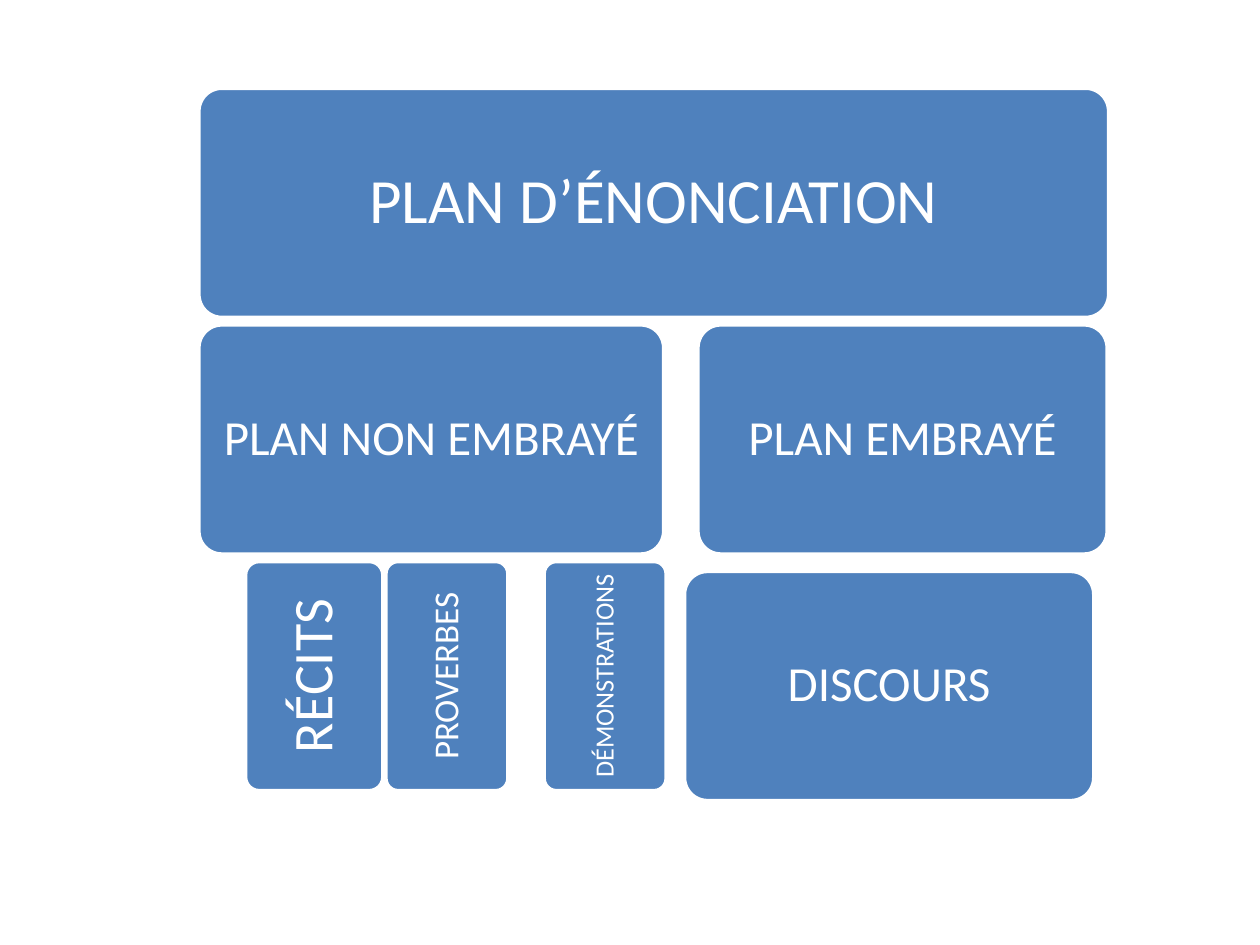
from dataclasses import dataclass

from pptx import Presentation
from pptx.dml.color import RGBColor
from pptx.enum.shapes import MSO_SHAPE as Shape
from pptx.enum.text import MSO_ANCHOR as Anchor, PP_ALIGN as Align
from pptx.util import Cm, Pt

# Content: label, row, left, width, extra drop (cm), type level, upright
BOXES = [
    ("PLAN D’ÉNONCIATION", 0, 4.01, 18.34, 0, "title", False),
    ("PLAN NON EMBRAYÉ", 1, 4.01, 9.37, 0, "plan", False),
    ("RÉCITS", 2, 4.95, 2.77, 0, "story", True),
    ("PROVERBES", 2, 7.78, 2.46, 0, "proverb", True),
    ("PLAN EMBRAYÉ", 1, 14.07, 8.25, 0, "plan", False),
    ("DISCOURS", 2, 13.8, 8.25, 0.2, "plan", False),
    ("DÉMONSTRATIONS", 2, 10.97, 2.46, 0, "proof", True),
]
TOP, ROW_HEIGHT, ROW_GAP = 1.78, 4.62, 0.15


@dataclass(frozen=True)
class Theme:
    font = "Calibri"
    fill = RGBColor(0x4F, 0x81, 0xBD)
    light = RGBColor(0xFF, 0xFF, 0xFF)
    outline = Pt(2)
    corner = 0.1
    inset_ratio = 0.3  # text inset relative to type size
    sizes = {"title": 36, "story": 32, "plan": 28, "proverb": 20, "proof": 15}


def add_box(slide, label, row, left, width, drop, level, upright):
    top = TOP + row * (ROW_HEIGHT + ROW_GAP) + drop
    shape = slide.shapes.add_shape(
        Shape.ROUNDED_RECTANGLE, Cm(left), Cm(top), Cm(width), Cm(ROW_HEIGHT))
    shape.adjustments[0] = Theme.corner
    shape.shadow.inherit = False
    shape.fill.solid()
    shape.fill.fore_color.rgb = Theme.fill
    shape.line.color.rgb = Theme.light
    shape.line.width = Theme.outline

    # Label
    size = Theme.sizes[level]
    frame = shape.text_frame
    frame.word_wrap = True
    frame.vertical_anchor = Anchor.MIDDLE
    inset = Pt(size * Theme.inset_ratio)
    frame.margin_left = frame.margin_right = inset
    frame.margin_top = frame.margin_bottom = inset
    if upright:
        frame._txBody.bodyPr.set("vert", "vert270")
    paragraph = frame.paragraphs[0]
    paragraph.text = label
    paragraph.alignment = Align.CENTER
    paragraph.line_spacing = 0.9
    paragraph.font.name = Theme.font
    paragraph.font.size = Pt(size)
    paragraph.font.color.rgb = Theme.light


def main():
    presentation = Presentation()
    presentation.slide_width, presentation.slide_height = Cm(25.4), Cm(19.05)
    slide = presentation.slides.add_slide(presentation.slide_layouts[6])
    for box in BOXES:
        add_box(slide, *box)
    presentation.save("out.pptx")


if __name__ == "__main__":
    main()
